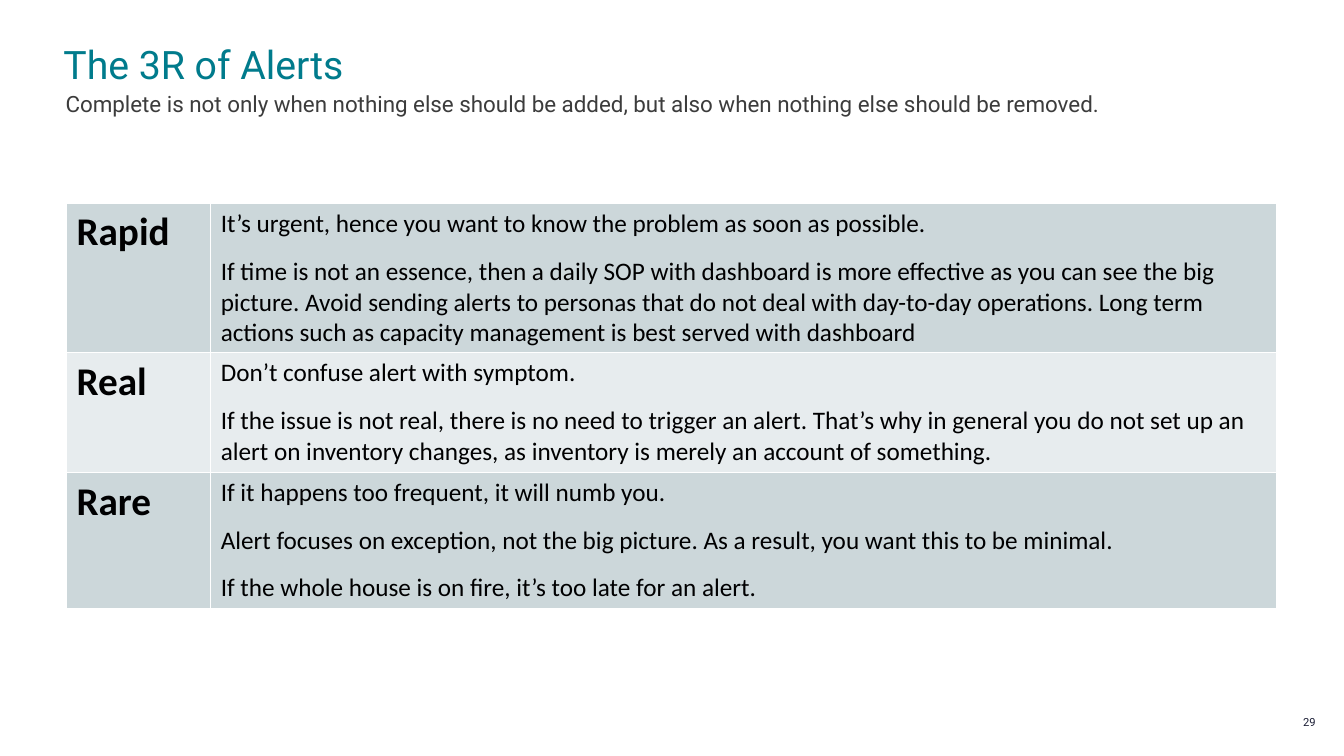
from lxml.etree import SubElement
from pptx import Presentation
from pptx.dml.color import RGBColor
from pptx.enum.text import MSO_ANCHOR as Anchor, PP_ALIGN as Align
from pptx.oxml.ns import qn
from pptx.util import Inches, Pt

COLORS = {
    "title": "007B8C",
    "subtitle": "3C3C3C",
    "number": "1B1E35",
    "text": "000001",
    "border": "FFFFFF",
    "dark_band": "CCD7DA",
    "light_band": "E7ECEE",
}

HEADINGS = [
    ("The 3R of Alerts", (0.63, 0.45, 12.03, 0.42), 28, "title", Anchor.BOTTOM, Align.LEFT, 0.9),
    ("Complete is not only when nothing else should be added, but also when nothing else should be removed.",
     (0.65, 0.89, 12.02, 0.27), 16, "subtitle", Anchor.TOP, Align.LEFT, 1.0),
    ("29", (12.57, 7.07, 0.48, 0.2), 8, "number", Anchor.MIDDLE, Align.RIGHT, 0.9),
]

ALERT_RULES = [
    ("Rapid", 1.48, [
        "It’s urgent, hence you want to know the problem as soon as possible.",
        "If time is not an essence, then a daily SOP with dashboard is more effective as you can see the big "
        "picture. Avoid sending alerts to personas that do not deal with day-to-day operations. Long term "
        "actions such as capacity management is best served with dashboard",
    ]),
    ("Real", 1.19, [
        "Don’t confuse alert with symptom.",
        "If the issue is not real, there is no need to trigger an alert. That’s why in general you do not set "
        "up an alert on inventory changes, as inventory is merely an account of something.",
    ]),
    ("Rare", 1.35, [
        "If it happens too frequent, it will numb you.",
        "Alert focuses on exception, not the big picture. As a result, you want this to be minimal.",
        "If the whole house is on fire, it’s too late for an alert.",
    ]),
]
COLUMN_WIDTHS = (1.43, 10.57)
TABLE_LEFT, TABLE_TOP = 0.66, 2.02


def color(name):
    return RGBColor.from_string(COLORS[name])


def style(para, font_name, size, color_name, bold=False):
    font = para.font
    font.name, font.size, font.bold = font_name, Pt(size), bold
    font.color.rgb = color(color_name)


def add_heading(page, text, place, size, color_name, anchor, align, spacing):
    frame = page.shapes.add_textbox(*map(Inches, place)).text_frame
    frame.margin_left = frame.margin_right = frame.margin_top = frame.margin_bottom = 0
    frame.word_wrap = True
    frame.vertical_anchor = anchor
    para = frame.paragraphs[0]
    para.text, para.alignment, para.line_spacing = text, align, spacing
    style(para, "Roboto", size, color_name)


def add_borders(cell):
    properties = cell._tc.get_or_add_tcPr()
    for index, side in enumerate(("lnL", "lnR", "lnT", "lnB")):
        line = properties.makeelement(qn(f"a:{side}"), {"w": str(Pt(1))})
        fill = SubElement(line, qn("a:solidFill"))
        SubElement(fill, qn("a:srgbClr"), val=COLORS["border"])
        properties.insert(index, line)


def fill_cell(cell, texts, size, bold, gap, band):
    cell.fill.solid()
    cell.fill.fore_color.rgb = color(band)
    add_borders(cell)
    frame = cell.text_frame
    for index, text in enumerate(texts):
        para = frame.add_paragraph() if index else frame.paragraphs[0]
        para.text = text
        para.space_before = Pt(gap if index else 0)
        para.space_after = Pt(gap)
        style(para, "Calibri", size, "text", bold)


def add_rules_table(page):
    height = sum(row_height for _, row_height, _ in ALERT_RULES)
    table = page.shapes.add_table(
        len(ALERT_RULES), len(COLUMN_WIDTHS), Inches(TABLE_LEFT), Inches(TABLE_TOP),
        Inches(sum(COLUMN_WIDTHS)), Inches(height)).table
    table.first_row = table.horz_banding = False
    for column, width in zip(table.columns, COLUMN_WIDTHS):
        column.width = Inches(width)
    for index, (name, row_height, details) in enumerate(ALERT_RULES):
        table.rows[index].height = Inches(row_height)
        band = "light_band" if index % 2 else "dark_band"
        fill_cell(table.cell(index, 0), [name], 28, True, 0, band)
        fill_cell(table.cell(index, 1), details, 18, False, 6, band)


def main():
    deck = Presentation()
    deck.slide_width, deck.slide_height = Inches(13.33), Inches(7.5)
    page = deck.slides.add_slide(deck.slide_layouts[6])
    for heading in HEADINGS:
        add_heading(page, *heading)
    add_rules_table(page)
    deck.save("out.pptx")


if __name__ == "__main__":
    main()
